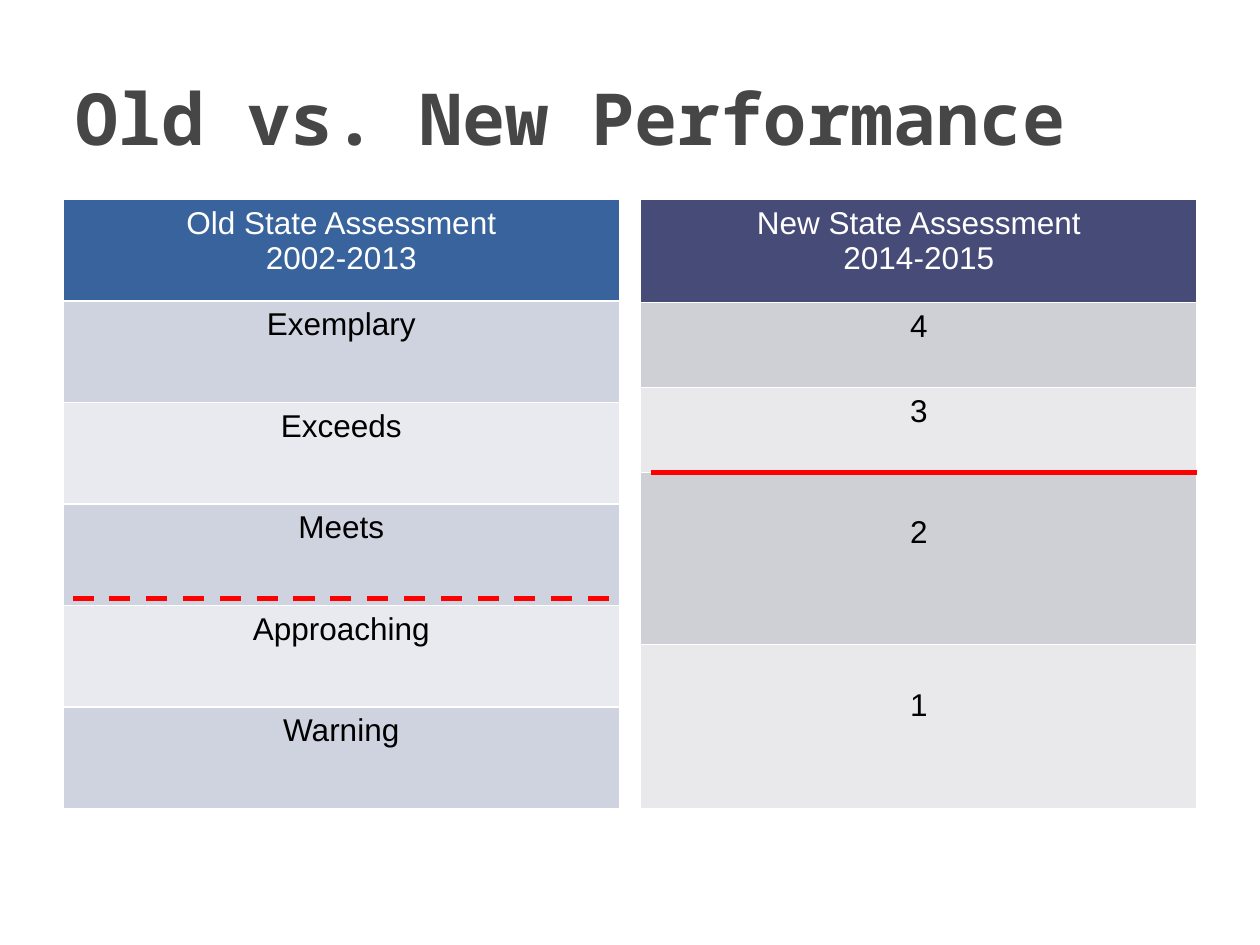
from lxml.etree import SubElement
from pptx import Presentation
from pptx.dml.color import RGBColor
from pptx.enum.dml import MSO_LINE
from pptx.enum.shapes import MSO_CONNECTOR
from pptx.enum.text import MSO_ANCHOR, PP_ALIGN
from pptx.oxml.ns import qn
from pptx.util import Inches, Pt

WHITE = RGBColor(0xFF, 0xFF, 0xFF)
BLACK = RGBColor(0x00, 0x00, 0x00)
GREY = RGBColor(0x46, 0x46, 0x46)
RED = RGBColor(0xFF, 0x00, 0x00)
BLUE = RGBColor(0x39, 0x63, 0x9D)
BLUE_BANDS = (RGBColor(0xCE, 0xD3, 0xDF), RGBColor(0xE8, 0xEA, 0xEF))
INDIGO = RGBColor(0x47, 0x4B, 0x78)
INDIGO_BANDS = (RGBColor(0xCF, 0xD0, 0xD6), RGBColor(0xE9, 0xE9, 0xEC))


class Deck:
    """Draws styled elements on a slide divided into 120 columns and 90 rows."""

    TITLE = {"name": "Noto Sans Mono", "size": Pt(41), "bold": True}
    BODY = {"name": "Arial", "size": Pt(18), "bold": False}

    def __init__(self):
        self.prs = Presentation()
        self.prs.slide_width, self.prs.slide_height = Inches(10), Inches(7.5)
        self.s = self.prs.slides.add_slide(self.prs.slide_layouts[6])

    def x(self, cols):
        return round(self.prs.slide_width * cols / 120)

    def y(self, rows):
        return round(self.prs.slide_height * rows / 90)

    def box(self, left, top, width, height):
        return self.x(left), self.y(top), self.x(width), self.y(height)

    def text(self, tf, text, style, color, align):
        tf.word_wrap = True
        for i, line in enumerate(text.split("\n")):
            p = tf.add_paragraph() if i else tf.paragraphs[0]
            p.alignment = align
            r = p.add_run()
            r.text = line
            for name, value in style.items():
                setattr(r.font, name, value)
            r.font.color.rgb = color

    def title(self, text, *area):
        tf = self.s.shapes.add_textbox(*self.box(*area)).text_frame
        tf.vertical_anchor = MSO_ANCHOR.MIDDLE
        self.text(tf, text, self.TITLE, GREY, PP_ALIGN.LEFT)

    def cell(self, cell, text, fill, color, drop):
        tcPr = cell._tc.get_or_add_tcPr()
        for side in ("a:lnL", "a:lnR", "a:lnT", "a:lnB"):
            ln = SubElement(tcPr, qn(side), w=str(Pt(1)))
            SubElement(SubElement(ln, qn("a:solidFill")), qn("a:srgbClr"), val=str(WHITE))
        cell.fill.solid()
        cell.fill.fore_color.rgb = fill
        cell.margin_left = cell.margin_right = Inches(0.11)
        cell.margin_top = Inches(0.05 + drop)
        cell.margin_bottom = Inches(0.05)
        self.text(cell.text_frame, text, self.BODY, color, PP_ALIGN.CENTER)

    def levels(self, left, top, width, heights, texts, head, bands, drops):
        area = self.box(left, top, width, sum(heights))
        table = self.s.shapes.add_table(len(texts), 1, *area).table
        table.first_row = table.horz_banding = False
        for i, (height, text) in enumerate(zip(heights, texts)):
            table.rows[i].height = self.y(height)
            fill, color = (bands[(i - 1) % 2], BLACK) if i else (head, WHITE)
            self.cell(table.cell(i, 0), text, fill, color, drops.get(text, 0))

    def line(self, x1, x2, y, dash=None):
        sp = self.s.shapes.add_connector(
            MSO_CONNECTOR.STRAIGHT, self.x(x1), self.y(y), self.x(x2), self.y(y))
        sp.line.color.rgb = RED
        for name, value in {"width": Pt(3), "dash_style": dash}.items():
            setattr(sp.line, name, value)
        SubElement(sp._element.spPr, qn("a:effectLst"))


def main():
    deck = Deck()
    deck.title("Old vs. New Performance", 6, 3.6, 108, 15)
    deck.levels(6, 19, 53, [58 / 6] * 6,
                ["Old State Assessment\n2002-2013", "Exemplary", "Exceeds",
                 "Meets", "Approaching", "Warning"],
                BLUE, BLUE_BANDS, {})
    deck.levels(61, 19, 53, [9.8, 8.1, 8.1, 16.4, 15.6],
                ["New State Assessment\n2014-2015", "4", "3", "2", "1"],
                INDIGO, INDIGO_BANDS, {"2": 0.29, "1": 0.29})
    deck.line(62, 114, 45)
    deck.line(58, 6.6, 57, MSO_LINE.DASH)
    deck.prs.save("out.pptx")


if __name__ == "__main__":
    main()
